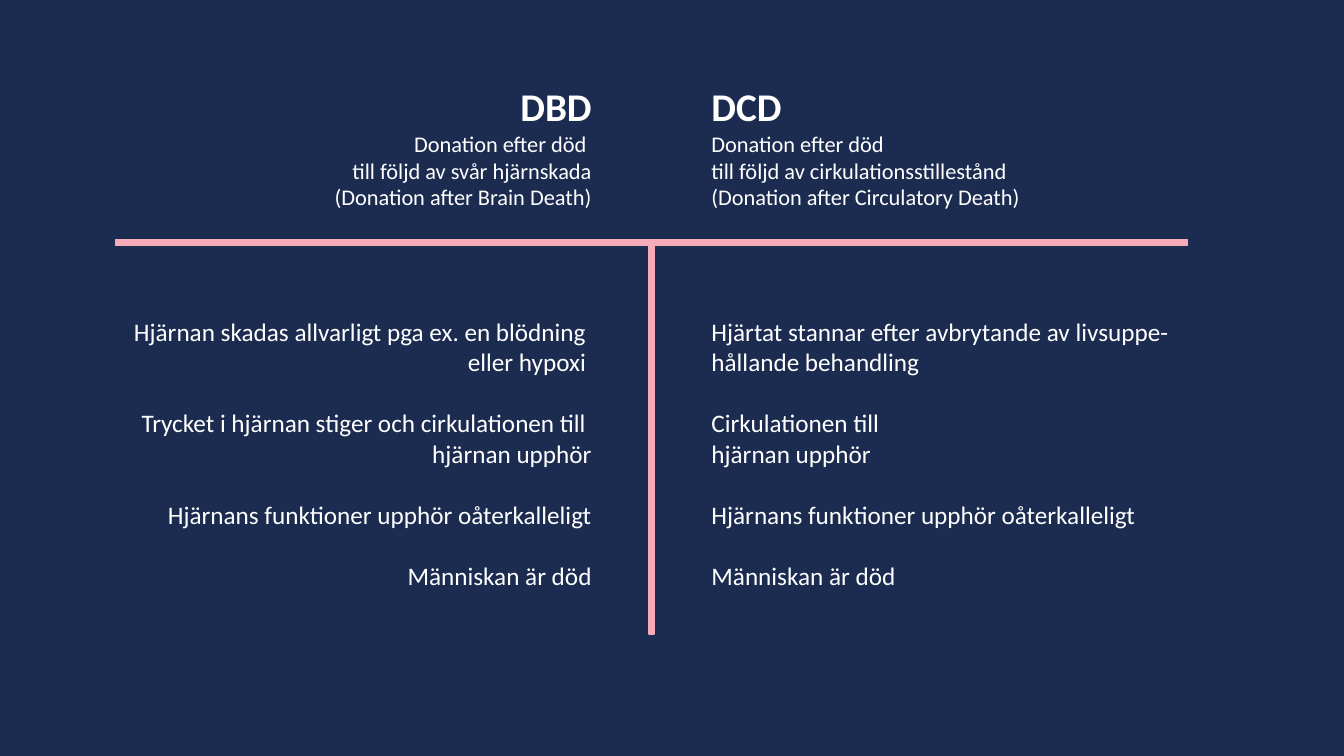
from pptx import Presentation
from pptx import util as u
from pptx.dml.color import RGBColor
from pptx.enum import shapes, text

COLORS = {"navy": "1C2C50", "pink": "F5ACB8", "white": "FFFFFF"}
TITLE = {"size": u.Pt(28), "bold": True}
SUBTITLE = {"size": u.Pt(16), "bold": False}
POINT = {"size": u.Pt(18), "bold": False}
HEADER_TOP, HEADER_HEIGHT = 1.96, 3.51
POINTS_TOP, POINTS_HEIGHT = 7.85, 7.19

COLUMNS = [
    {
        "align": text.PP_ALIGN.RIGHT,
        "header_box": (-4.98, 20.14),
        "points_box": (-1.5, 16.66),
        "title": "DBD",
        "subtitle": ["Donation efter död ", "till följd av svår hjärnskada",
                     "(Donation after Brain Death)"],
        "points": ["Hjärnan skadas allvarligt pga ex. en blödning \neller hypoxi ",
                   "Trycket i hjärnan stiger och cirkulationen till \nhjärnan upphör",
                   "Hjärnans funktioner upphör oåterkalleligt",
                   "Människan är död"],
    },
    {
        "align": text.PP_ALIGN.LEFT,
        "header_box": (17.68, 13.79),
        "points_box": (17.68, 16.18),
        "title": "DCD ",
        "subtitle": ["Donation efter död ", "till följd av cirkulationsstillestånd",
                     "(Donation after Circulatory Death)"],
        "points": ["Hjärtat stannar efter avbrytande av livsuppe-\nhållande behandling",
                   "Cirkulationen till \nhjärnan upphör",
                   "Hjärnans funktioner upphör oåterkalleligt",
                   "Människan är död"],
    },
]


def color(name):
    """Return the named colour."""
    return RGBColor.from_string(COLORS[name])


def add_text(s, box, paragraphs, align, gap=0):
    """Fill a text box with (text, format) paragraphs, gap points apart."""
    tf = s.shapes.add_textbox(*map(u.Cm, box)).text_frame
    tf.word_wrap = True
    tf.auto_size = text.MSO_AUTO_SIZE.SHAPE_TO_FIT_TEXT
    for i, (content, fmt) in enumerate(paragraphs):
        p = tf.add_paragraph() if i else tf.paragraphs[0]
        p.text = content
        p.alignment = align
        if i and gap:
            p.space_before = u.Pt(gap)
        for r in p.runs:
            for key, value in {"name": "Calibri", **fmt}.items():
                setattr(r.font, key, value)
            r.font.color.rgb = color("white")


def add_header(s, box, column):
    """Place the bold title and its explanation."""
    lines = [(column["title"], TITLE)] + [(t, SUBTITLE) for t in column["subtitle"]]
    add_text(s, box, lines, column["align"])


def add_points(s, box, column):
    """Place the steps of one column."""
    add_text(s, box, [(t, POINT) for t in column["points"]], column["align"], 22)


def add_bar(s, box, line_width, rotation=0):
    """Draw one bar of the T-shaped divider."""
    sp = s.shapes.add_shape(shapes.MSO_SHAPE.MATH_MINUS, *map(u.Cm, box))
    sp.shadow.inherit = False
    sp.rotation = rotation
    sp.fill.solid()
    sp.fill.fore_color.rgb = color("pink")
    sp.line.color.rgb = color("pink")
    sp.line.width = u.Pt(line_width)


def main():
    """Build and save the comparison slide."""
    prs = Presentation()
    prs.slide_width, prs.slide_height = u.Cm(33.87), u.Cm(19.05)
    s = prs.slides.add_slide(prs.slide_layouts[6])
    s.background.fill.solid()
    s.background.fill.fore_color.rgb = color("navy")
    add_bar(s, (-1.96, 5.82, 36.75, 0.58), 0.5)
    add_bar(s, (9.7, 10.8, 13.44, 0.46), 1.5, 90)
    for column in COLUMNS:
        left, width = column["header_box"]
        add_header(s, (left, HEADER_TOP, width, HEADER_HEIGHT), column)
        left, width = column["points_box"]
        add_points(s, (left, POINTS_TOP, width, POINTS_HEIGHT), column)
    prs.save("out.pptx")


if __name__ == "__main__":
    main()
